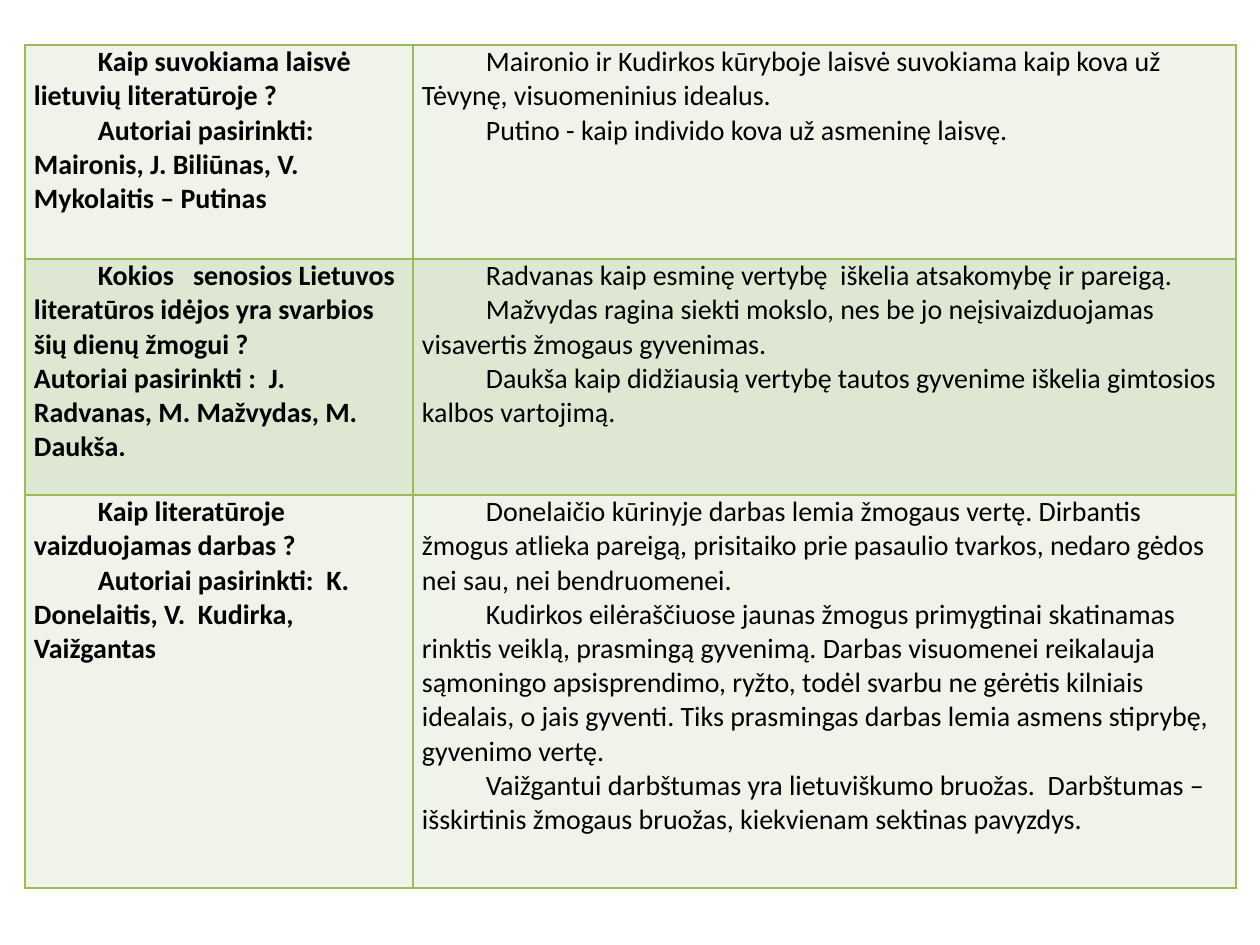
from dataclasses import dataclass

import lxml.etree
import pptx
import pptx.dml.color
import pptx.enum.text
import pptx.oxml.ns
import pptx.util

SCALE = 914400 / 126  # EMU in one px


@dataclass(frozen=True)
class Theme:
    font: str = "Calibri"
    size: int = 16
    ink: str = "000000"
    line: str = "9BBB59"
    bands: tuple[str, ...] = ("EFF3EA", "DEE7D1")


@dataclass(frozen=True)
class Para:
    text: str
    indent: int = 64


@dataclass(frozen=True)
class Row:
    height: int
    topic: tuple[Para, ...]
    answer: tuple[Para, ...]


THEME = Theme()
LEFT, TOP = 25, 45
WIDTHS = (388, 823)
INSET = 9

ROWS = (
    Row(
        214,
        (
            Para("Kaip suvokiama laisvė lietuvių literatūroje ?"),
            Para("Autoriai pasirinkti: Maironis, J. Biliūnas, V. Mykolaitis – Putinas"),
        ),
        (
            Para("Maironio ir Kudirkos kūryboje laisvė suvokiama kaip kova už "
                 "Tėvynę, visuomeninius idealus."),
            Para("Putino - kaip individo kova už asmeninę laisvę."),
        ),
    ),
    Row(
        236,
        (
            Para("Kokios   senosios Lietuvos literatūros idėjos yra svarbios "
                 "šių dienų žmogui ?"),
            Para("Autoriai pasirinkti :  J. Radvanas, M. Mažvydas, M. Daukša.", indent=0),
        ),
        (
            Para("Radvanas kaip esminę vertybę  iškelia atsakomybę ir pareigą."),
            Para("Mažvydas ragina siekti mokslo, nes be jo neįsivaizduojamas "
                 "visavertis žmogaus gyvenimas."),
            Para("Daukša kaip didžiausią vertybę tautos gyvenime iškelia gimtosios "
                 "kalbos vartojimą."),
        ),
    ),
    Row(
        393,
        (
            Para("Kaip literatūroje vaizduojamas darbas ?"),
            Para("Autoriai pasirinkti:  K. Donelaitis, V.  Kudirka, Vaižgantas"),
        ),
        (
            Para("Donelaičio kūrinyje darbas lemia žmogaus vertę. Dirbantis žmogus "
                 "atlieka pareigą, prisitaiko prie pasaulio tvarkos, nedaro gėdos "
                 "nei sau, nei bendruomenei."),
            Para("Kudirkos eilėraščiuose jaunas žmogus primygtinai skatinamas rinktis "
                 "veiklą, prasmingą gyvenimą. Darbas visuomenei reikalauja sąmoningo "
                 "apsisprendimo, ryžto, todėl svarbu ne gėrėtis kilniais idealais, "
                 "o jais gyventi. Tiks prasmingas darbas lemia asmens stiprybę, "
                 "gyvenimo vertę."),
            Para("Vaižgantui darbštumas yra lietuviškumo bruožas.  Darbštumas – "
                 "išskirtinis žmogaus bruožas, kiekvienam sektinas pavyzdys."),
        ),
    ),
)


def px(num: int) -> pptx.util.Emu:
    return pptx.util.Emu(round(num * SCALE))


def rgb(code: str) -> pptx.dml.color.RGBColor:
    return pptx.dml.color.RGBColor.from_string(code)


def write(par, text: str, *, indent: int = 0, bold: bool = False) -> None:
    """Put text in a paragraph, with a first-line indent in px."""
    props = par._p.get_or_add_pPr()
    props.set("marL", "0")
    props.set("indent", str(px(indent)))
    par.alignment = pptx.enum.text.PP_ALIGN.LEFT
    run = par.add_run()
    run.text = text
    run.font.name = THEME.font
    run.font.size = pptx.util.Pt(THEME.size)
    run.font.bold = bold
    run.font.color.rgb = rgb(THEME.ink)


def frame(cell) -> None:
    """Draw the four borders of a cell; they must come before its fill."""
    name = pptx.oxml.ns.qn
    props = cell._tc.get_or_add_tcPr()
    for spot, side in enumerate(("a:lnL", "a:lnR", "a:lnT", "a:lnB")):
        edge = lxml.etree.Element(name(side), w=str(pptx.util.Pt(1)))
        fill = lxml.etree.SubElement(edge, name("a:solidFill"))
        lxml.etree.SubElement(fill, name("a:srgbClr"), val=THEME.line)
        props.insert(spot, edge)


def draw_cell(cell, paras: tuple[Para, ...], fill: str, bold: bool) -> None:
    cell.margin_left = cell.margin_right = px(INSET)
    cell.margin_top = cell.margin_bottom = 0
    cell.fill.solid()
    cell.fill.fore_color.rgb = rgb(fill)
    frame(cell)
    box = cell.text_frame
    for num, para in enumerate(paras):
        par = box.add_paragraph() if num else box.paragraphs[0]
        write(par, para.text, indent=para.indent, bold=bold)


def draw_table(slide, rows: tuple[Row, ...]) -> None:
    high = sum(row.height for row in rows)
    table = slide.shapes.add_table(
        len(rows), len(WIDTHS), px(LEFT), px(TOP), px(sum(WIDTHS)), px(high)
    ).table
    table.first_row = table.horz_banding = False
    for col, width in zip(table.columns, WIDTHS):
        col.width = px(width)
    for num, row in enumerate(rows):
        table.rows[num].height = px(row.height)
        fill = THEME.bands[num % len(THEME.bands)]
        draw_cell(table.cell(num, 0), row.topic, fill, bold=True)
        draw_cell(table.cell(num, 1), row.answer, fill, bold=False)


def main() -> None:
    # Blank 4:3 slide
    deck = pptx.Presentation()
    deck.slide_width, deck.slide_height = px(1260), px(945)
    slide = deck.slides.add_slide(deck.slide_layouts[6])

    # Topics on the left, answers on the right
    draw_table(slide, ROWS)
    deck.save("out.pptx")


if __name__ == "__main__":
    main()
